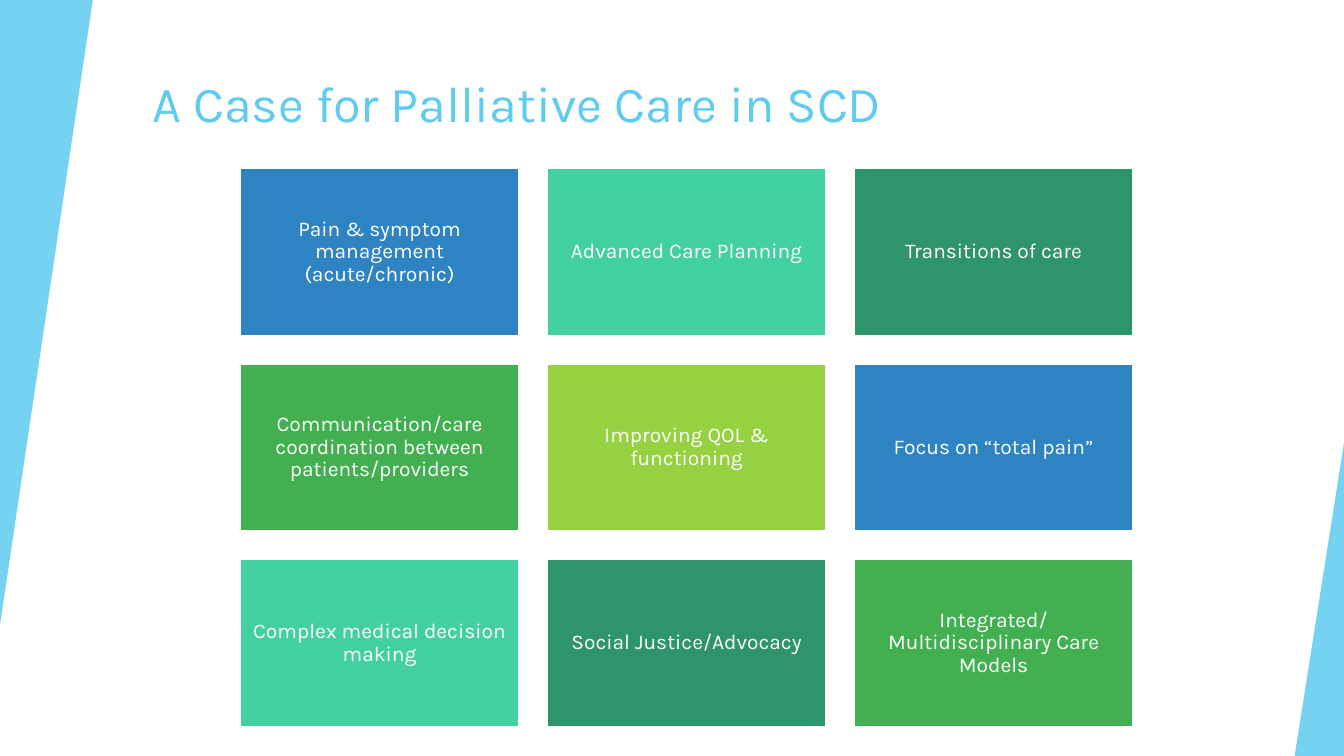
from typing import Any, NamedTuple

from lxml.etree import SubElement
from pptx import Presentation
from pptx.dml.color import RGBColor
from pptx.enum.shapes import MSO_SHAPE
from pptx.enum.text import MSO_ANCHOR, MSO_AUTO_SIZE, PP_ALIGN
from pptx.oxml.ns import qn
from pptx.slide import Slide
from pptx.util import Inches, Pt

WHITE = RGBColor(0xFF, 0xFF, 0xFF)
SKY = RGBColor(0x5F, 0xCB, 0xEF)
BLUE = RGBColor(0x2E, 0x83, 0xC3)
MINT = RGBColor(0x42, 0xD0, 0xA2)
PINE = RGBColor(0x2E, 0x94, 0x6B)
GREEN = RGBColor(0x42, 0xB0, 0x51)
LIME = RGBColor(0x96, 0xD1, 0x41)

FONT = "Karla"
COLUMNS = 3
GRID_LEFT, GRID_TOP = 2.38, 1.67
CARD_WIDTH, CARD_HEIGHT = 2.77, 1.66
COLUMN_STEP, ROW_STEP = 3.045, 1.94
CARD_FRAME = {
    "word_wrap": True,
    "vertical_anchor": MSO_ANCHOR.MIDDLE,
    "margin_left": Inches(0.06),
    "margin_right": Inches(0.06),
    "margin_top": Inches(0.06),
    "margin_bottom": Inches(0.06),
}
TITLE_FRAME = {
    "word_wrap": True,
    "auto_size": MSO_AUTO_SIZE.NONE,
    "vertical_anchor": MSO_ANCHOR.TOP,
}
TITLE_PLACE = {
    "left": Inches(1.41),
    "top": Inches(0.67),
    "width": Inches(11.15),
    "height": Inches(1.2),
}


class Wedge(NamedTuple):
    left: float
    top: float
    width: float
    height: float
    rotation: int


class Card(NamedTuple):
    topic: str
    color: RGBColor


WEDGES = [
    Wedge(0, 0, 0.92, 6.2, 180),
    Wedge(12.84, 4.39, 0.49, 3.11, 0),
]
CARDS = [
    Card("Pain & symptom management (acute/chronic)", BLUE),
    Card("Advanced Care Planning", MINT),
    Card("Transitions of care", PINE),
    Card("Communication/care coordination between patients/providers", GREEN),
    Card("Improving QOL & functioning", LIME),
    Card("Focus on “total pain”", BLUE),
    Card("Complex medical decision making", MINT),
    Card("Social Justice/Advocacy", PINE),
    Card("Integrated/Multidisciplinary Care Models", GREEN),
]


def apply_format(target: Any, values: dict[str, Any]) -> None:
    for attribute, value in values.items():
        setattr(target, attribute, value)


def write_text(frame: Any, text: str, size: int, color: RGBColor,
               paragraph_format: dict[str, Any]) -> None:
    frame.text = text
    paragraph = frame.paragraphs[0]
    apply_format(paragraph, paragraph_format)
    font = paragraph.runs[0].font
    apply_format(font, {"name": FONT, "size": Pt(size), "bold": False})
    font.color.rgb = color


def draw_wedge(slide: Slide, wedge: Wedge) -> None:
    triangle = slide.shapes.add_shape(
        MSO_SHAPE.ISOSCELES_TRIANGLE, Inches(wedge.left), Inches(wedge.top),
        Inches(wedge.width), Inches(wedge.height))
    triangle.adjustments[0] = 1
    triangle.rotation = wedge.rotation
    triangle.shadow.inherit = False
    triangle.line.fill.background()
    triangle.fill.solid()
    triangle.fill.fore_color.rgb = SKY
    # Let the background show through slightly
    sky_color = triangle.fill._xPr.find(qn("a:solidFill"))[0]
    SubElement(sky_color, qn("a:alpha"), val="85000")


def draw_card(slide: Slide, card: Card, row: int, column: int) -> None:
    box = slide.shapes.add_shape(
        MSO_SHAPE.RECTANGLE,
        Inches(GRID_LEFT + column * COLUMN_STEP),
        Inches(GRID_TOP + row * ROW_STEP),
        Inches(CARD_WIDTH), Inches(CARD_HEIGHT))
    box.shadow.inherit = False
    box.fill.solid()
    box.fill.fore_color.rgb = card.color
    box.line.color.rgb = WHITE
    box.line.width = Pt(1.5)
    apply_format(box.text_frame, CARD_FRAME)
    write_text(box.text_frame, card.topic, 15, WHITE,
               {"alignment": PP_ALIGN.CENTER, "line_spacing": 0.9})


def main() -> None:
    deck = Presentation()
    deck.slide_width, deck.slide_height = Inches(13.33), Inches(7.5)
    slide = deck.slides.add_slide(deck.slide_layouts.get_by_name("Title Only"))
    slide.background.fill.solid()
    slide.background.fill.fore_color.rgb = WHITE

    # Title
    title = slide.shapes.title
    apply_format(title, TITLE_PLACE)
    apply_format(title.text_frame, TITLE_FRAME)
    write_text(title.text_frame, "A Case for Palliative Care in SCD", 36, SKY,
               {"alignment": PP_ALIGN.LEFT})

    # Side wedges
    for wedge in WEDGES:
        draw_wedge(slide, wedge)

    # Grid of topics
    for index, card in enumerate(CARDS):
        draw_card(slide, card, *divmod(index, COLUMNS))

    deck.save("out.pptx")


if __name__ == "__main__":
    main()
